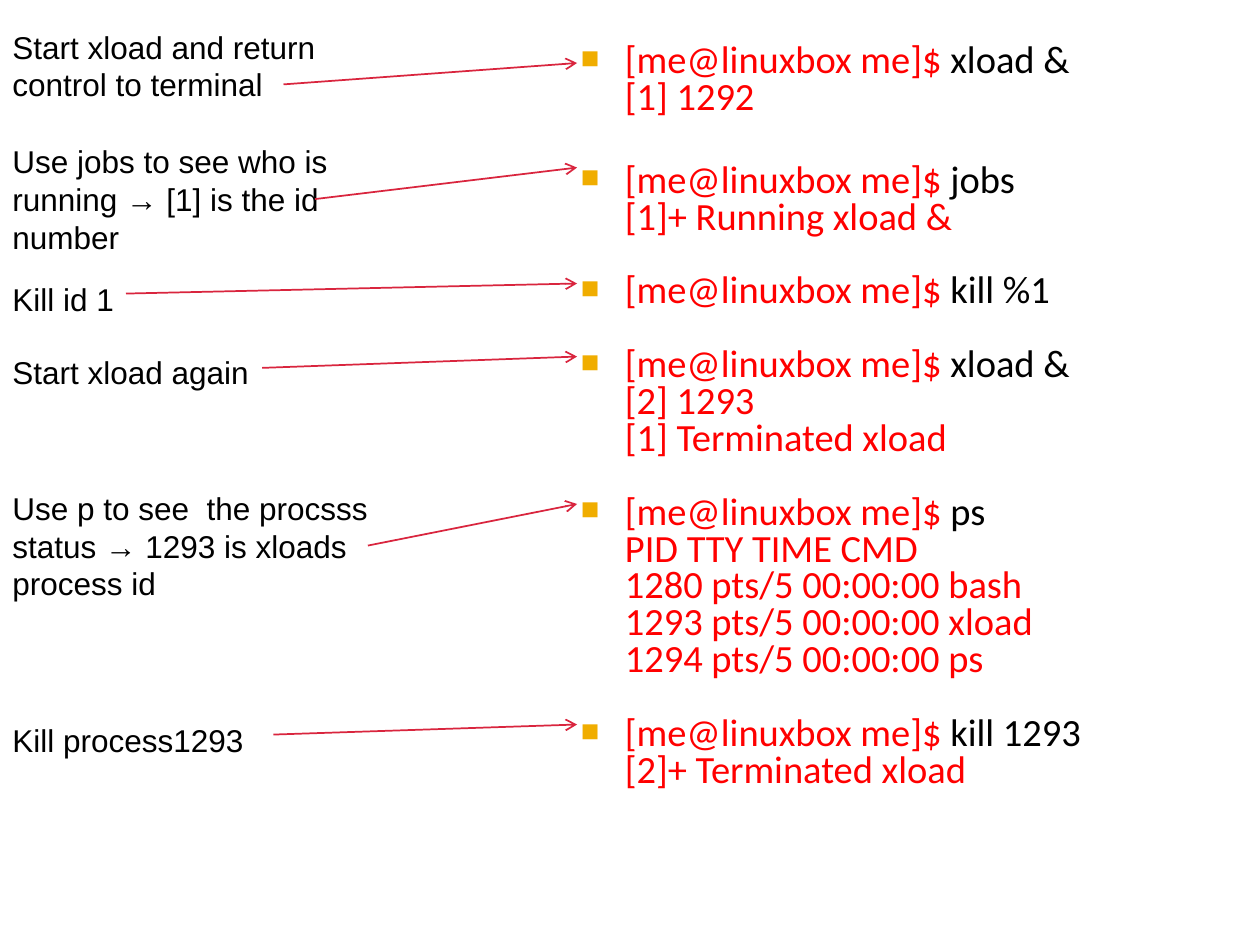
import pptx
import pptx.dml.color
import pptx.enum.shapes
import pptx.enum.text
import pptx.oxml.ns
import pptx.util
from lxml import etree
from pptx.util import Inches

BLACK = pptx.dml.color.RGBColor(0x00, 0x00, 0x00)
RED = pptx.dml.color.RGBColor(0xFF, 0x00, 0x00)
CRIMSON = pptx.dml.color.RGBColor(0xD9, 0x25, 0x3E)
AMBER = pptx.dml.color.RGBColor(0xF0, 0xAD, 0x00)

PROMPT = "[me@linuxbox me]$ "
ARROW_TIP_X = 4.58

# Command, its output lines, space after in points
SESSION = [
    ("xload &", ["[1] 1292"], 26),
    ("jobs", ["[1]+ Running xload &"], 21),
    ("kill %1", [], 21),
    ("xload &", ["[2] 1293", "[1] Terminated xload"], 21),
    ("ps", ["PID TTY TIME CMD", "1280 pts/5 00:00:00 bash",
            "1293 pts/5 00:00:00 xload", "1294 pts/5 00:00:00 ps"], 21),
    ("kill 1293", ["[2]+ Terminated xload"], 0),
]

# Note, top, width, height, arrow start (x, y), arrow tip y
NOTES = [
    ("Start xload and return control to terminal",
     0.17, 3.08, 0.71, (2.25, 0.67), 0.5),
    ("Use jobs to see who is running → [1] is the id number",
     1.08, 3.17, 1.01, (2.5, 1.58), 1.33),
    ("Kill id 1", 2.17, 3.08, 0.4, (1, 2.33), 2.25),
    ("Start xload again", 2.75, 3.08, 0.4, (2.08, 2.92), 2.83),
    ("Use p to see  the procsss status → 1293 is xloads process id",
     3.83, 3.17, 1.01, (2.92, 4.33), 4),
    ("Kill process1293", 5.67, 3.08, 0.4, (2.17, 5.83), 5.75),
]


def add_child(parent, tag, **attributes):
    return etree.SubElement(parent, pptx.oxml.ns.qn(tag), attributes)


def add_square_bullet(paragraph):
    properties = paragraph._p.get_or_add_pPr()
    properties.set("marL", str(Inches(0.48)))
    properties.set("indent", str(Inches(-0.35)))
    colour = add_child(properties, "a:buClr")
    add_child(colour, "a:srgbClr", val=str(AMBER))
    add_child(properties, "a:buSzPct", val="80000")
    add_child(properties, "a:buChar", char="■")


def add_run(paragraph, text, colour):
    run = paragraph.add_run()
    run.text = text
    run.font.color.rgb = colour


def add_command(paragraph, command, output, space_after):
    """Write one prompt with its command, then the output on lines below."""
    add_square_bullet(paragraph)
    paragraph.line_spacing = 0.8
    paragraph.space_before = pptx.util.Pt(0)
    paragraph.space_after = pptx.util.Pt(space_after)
    paragraph.font.name = "Calibri"
    paragraph.font.size = pptx.util.Pt(22)
    add_run(paragraph, PROMPT, RED)
    add_run(paragraph, command, BLACK)
    for line in output:
        paragraph.add_line_break()
        add_run(paragraph, line, RED)


def fill_session(body):
    body.left, body.top = Inches(4.42), Inches(0.25)
    body.width, body.height = Inches(5.58), Inches(7.17)
    frame = body.text_frame
    frame.auto_size = pptx.enum.text.MSO_AUTO_SIZE.NONE
    frame.margin_left, frame.margin_top = Inches(0.06), Inches(0.1)
    frame.margin_right, frame.margin_bottom = Inches(0.1), Inches(0.05)
    for index, entry in enumerate(SESSION):
        paragraph = frame.add_paragraph() if index else frame.paragraphs[0]
        add_command(paragraph, *entry)


def add_note(slide, text, top, width, height):
    note = slide.shapes.add_textbox(
        0, Inches(top), Inches(width), Inches(height))
    frame = note.text_frame
    frame.word_wrap = True
    frame.auto_size = pptx.enum.text.MSO_AUTO_SIZE.SHAPE_TO_FIT_TEXT
    paragraph = frame.paragraphs[0]
    paragraph.text = text
    paragraph.font.name = "Arial"
    paragraph.font.size = pptx.util.Pt(18)
    paragraph.font.color.rgb = BLACK


def add_arrow(slide, start, tip_y):
    arrow = slide.shapes.add_connector(
        pptx.enum.shapes.MSO_CONNECTOR.STRAIGHT,
        Inches(start[0]), Inches(start[1]),
        Inches(ARROW_TIP_X), Inches(tip_y))
    arrow.line.color.rgb = CRIMSON
    arrow.line.width = pptx.util.Pt(1)
    add_child(arrow.line._get_or_add_ln(), "a:tailEnd", type="arrow")
    add_child(arrow._element.spPr, "a:effectLst")


def main():
    presentation = pptx.Presentation()
    presentation.slide_width = Inches(10)
    presentation.slide_height = Inches(7.5)
    slide = presentation.slides.add_slide(presentation.slide_layouts[1])
    title = slide.shapes.title._element
    title.getparent().remove(title)

    fill_session(slide.placeholders[1])
    for text, top, width, height, arrow_start, tip_y in NOTES:
        add_note(slide, text, top, width, height)
        add_arrow(slide, arrow_start, tip_y)

    presentation.save("out.pptx")


if __name__ == "__main__":
    main()
